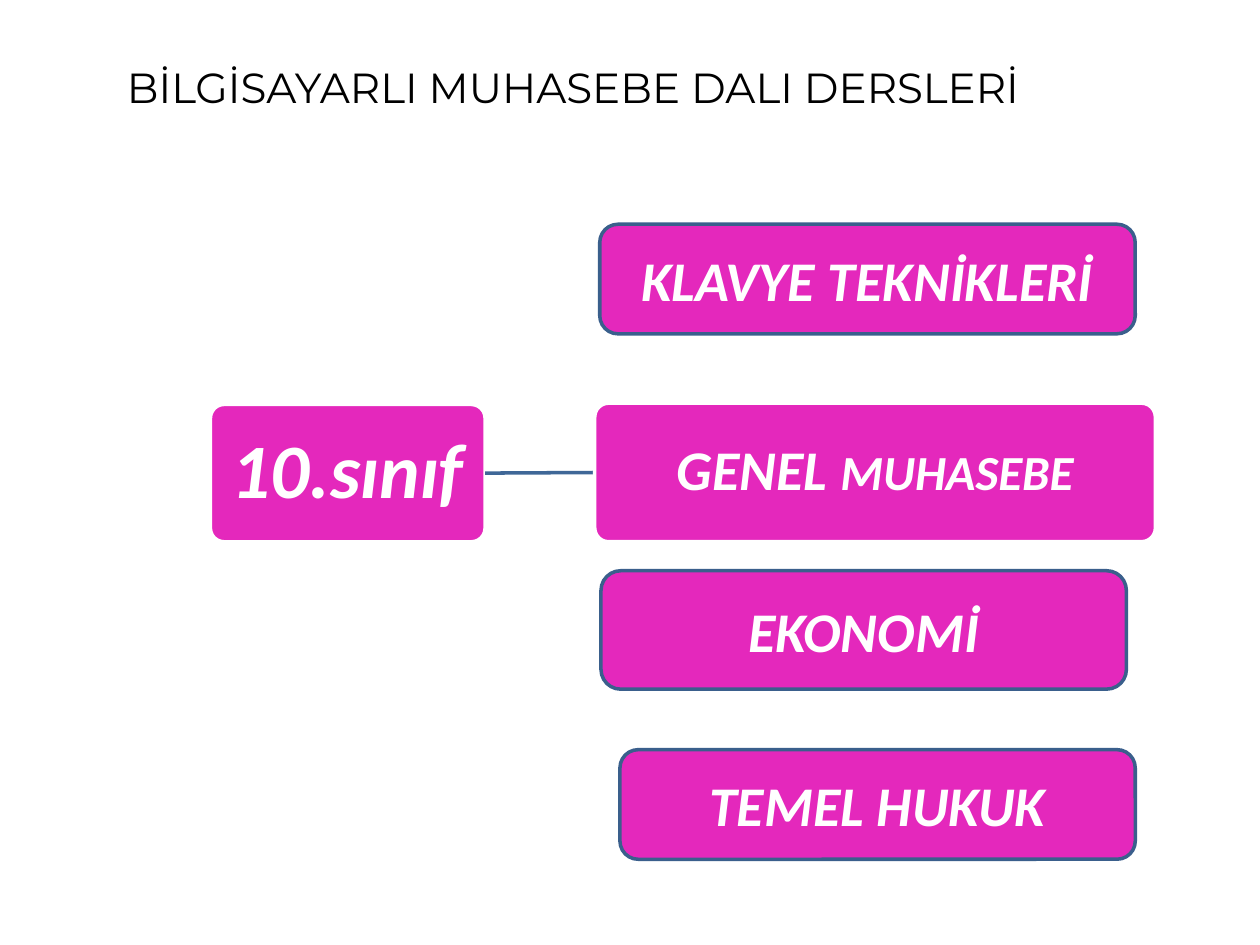
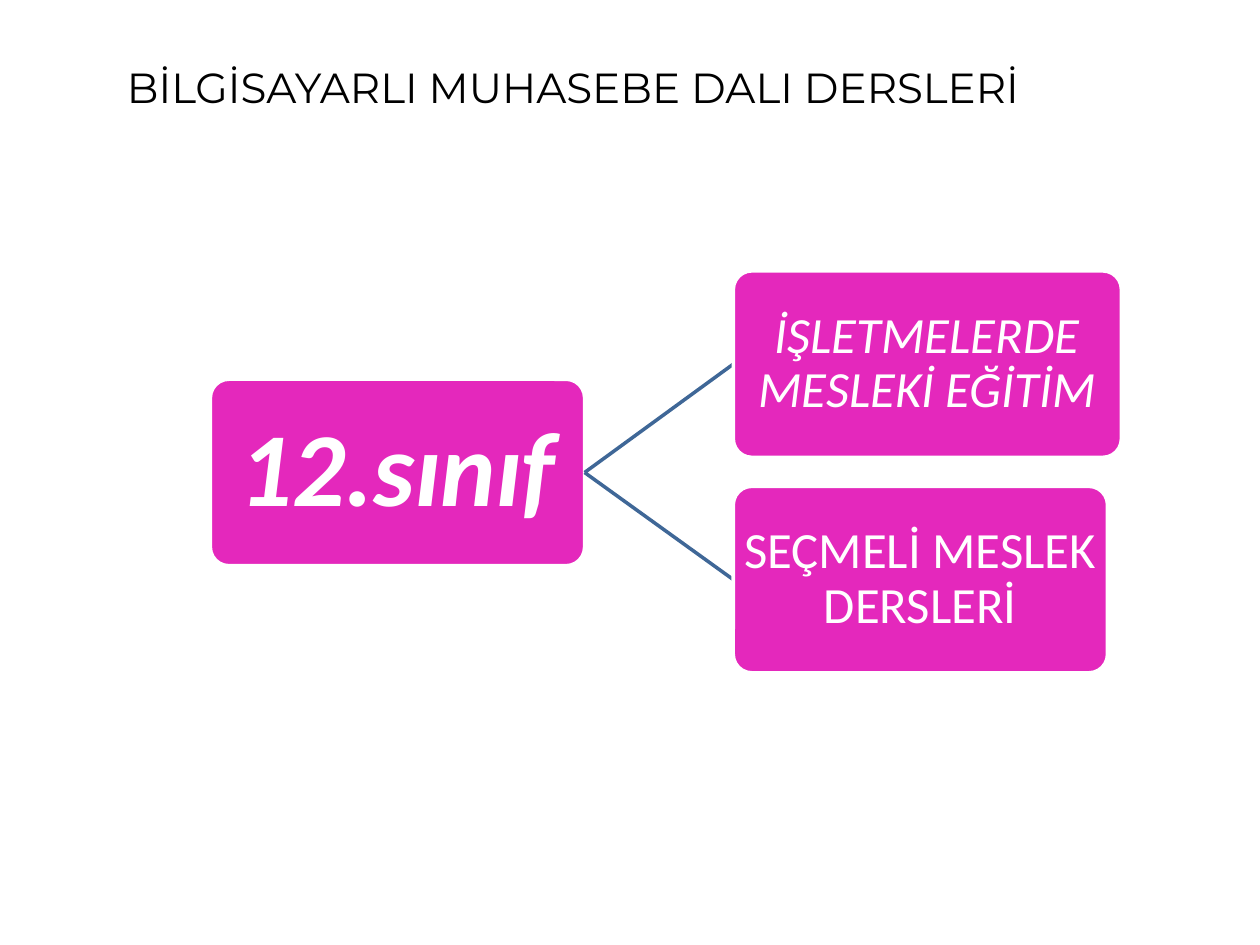
from dataclasses import dataclass

from pptx import Presentation as Deck
from pptx.dml.color import RGBColor as Rgb
from pptx.enum.shapes import MSO_CONNECTOR as Link, MSO_SHAPE as Form
from pptx.enum.text import MSO_ANCHOR as Anchor, PP_ALIGN as Align
from pptx.oxml import parse_xml as to_xml
from pptx.util import Inches, Pt

NO_GLOW = '<a:effectLst xmlns:a="http://schemas.openxmlformats.org/drawingml/2006/main"/>'
HEAD = "BİLGİSAYARLI MUHASEBE DALI DERSLERİ"


@dataclass(frozen=True)
class Theme:
    pink: Rgb = Rgb.from_string("E428BC")
    white: Rgb = Rgb.from_string("FFFFFF")
    black: Rgb = Rgb.from_string("000000")
    edge: Rgb = Rgb.from_string("3A5F8C")
    link: Rgb = Rgb.from_string("3F6797")
    font: str = "Calibri"
    head_font: str = "Montserrat"
    stroke: int = 2
    head: int = 24
    small: int = 28
    topic: int = 29
    label: int = 32
    grade: int = 44
    big_grade: int = 60


T = Theme()


def style(run, size, color=T.white, font=T.font, bold=False, slant=False):
    run.font.size = Pt(size)
    run.font.name = font
    run.font.color.rgb = color
    run.font.bold = bold
    run.font.italic = slant


def add_page(deck):
    page = deck.slides.add_slide(deck.slide_layouts[6])
    box = page.shapes.add_textbox(Inches(0.91), Inches(0.44), Inches(8.43), Inches(0.5))
    box.text_frame.word_wrap = True
    box.text_frame.text = HEAD
    style(box.text_frame.paragraphs[0].runs[0], T.head, T.black, T.head_font)
    return page


def add_box(page, spot, text, size, edge, bold=True, slant=True):
    box = page.shapes.add_shape(Form.ROUNDED_RECTANGLE, *map(Inches, spot))
    box.shadow.inherit = False
    box.fill.solid()
    box.fill.fore_color.rgb = T.pink
    box.line.color.rgb = edge
    box.line.width = Pt(T.stroke)
    frame = box.text_frame
    frame.word_wrap = True
    frame.vertical_anchor = Anchor.MIDDLE
    frame.text = text
    para = frame.paragraphs[0]
    para.alignment = Align.CENTER
    style(para.runs[0], size, bold=bold, slant=slant)
    return box


def add_node(page, spot, text, size, bold=True, slant=True):
    node = add_box(page, spot, text, size, T.white, bold, slant)
    node.adjustments[0] = 0.1
    frame = node.text_frame
    frame.margin_left = frame.margin_right = Inches(0.02)
    frame.margin_top = frame.margin_bottom = Inches(0.02)
    frame.paragraphs[0].line_spacing = 0.9
    return node


def add_branch(page, root, spot, text, size, bold=True, slant=True):
    line = page.shapes.add_connector(Link.STRAIGHT, 0, 0, 0, 0)
    line.line.color.rgb = T.link
    line.line.width = Pt(T.stroke)
    line._element.spPr.append(to_xml(NO_GLOW))
    node = add_node(page, spot, text, size, bold, slant)
    line.begin_connect(root, 3)
    line.end_connect(node, 1)
    return node


def add_tenth(deck):
    page = add_page(deck)
    root = add_node(page, (1.67, 3.21, 2.18, 1.09), "10.sınıf", T.grade)
    node = add_branch(page, root, (4.72, 3.2, 4.45, 1.1), "GENEL ", T.label)
    tail = node.text_frame.paragraphs[0].add_run()
    tail.text = "MUHASEBE"
    style(tail, T.small, bold=True, slant=True)
    for text, spot in (
        ("KLAVYE TEKNİKLERİ", (4.76, 1.78, 4.25, 0.87)),
        ("EKONOMİ", (4.77, 4.53, 4.17, 0.94)),
        ("TEMEL HUKUK", (4.92, 5.95, 4.09, 0.87)),
    ):
        add_box(page, spot, text, T.label, T.edge)


def add_twelfth(deck):
    page = add_page(deck)
    wide, high = 2.97, 1.48
    root = add_node(page, (1.67, 3.01, wide, high), "12.sınıf", T.big_grade)
    for text, top, width, slant in (
        ("İŞLETMELERDE MESLEKİ EĞİTİM", 2.15, 3.08, True),
        ("SEÇMELİ MESLEK DERSLERİ", 3.86, wide, False),
    ):
        add_branch(page, root, (5.82, top, width, high), text, T.topic, False, slant)


def main():
    deck = Deck()
    deck.slide_width, deck.slide_height = Inches(10), Inches(7.5)
    add_tenth(deck)
    add_twelfth(deck)
    deck.save("out.pptx")


if __name__ == "__main__":
    main()
